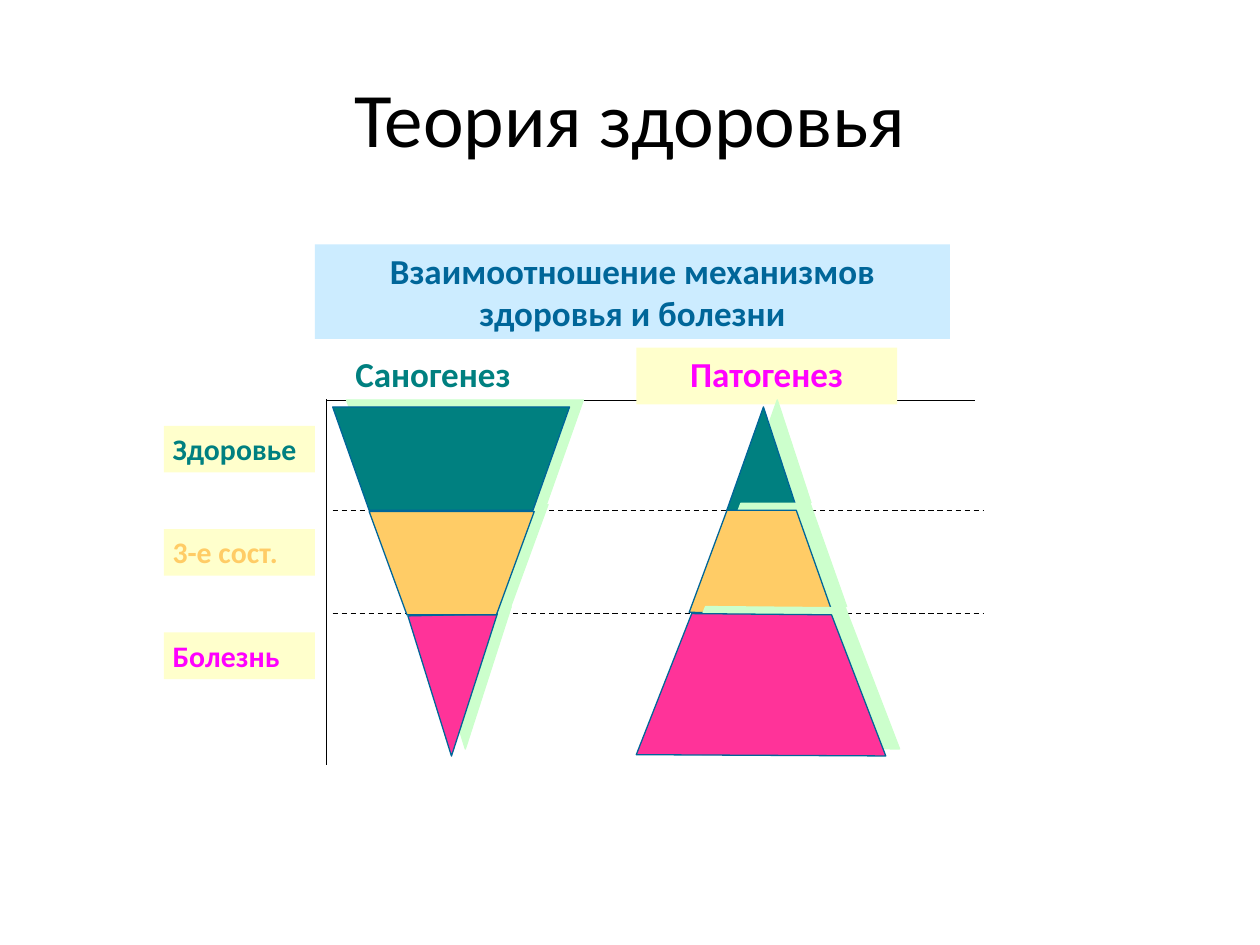
import pptx
import pptx.util
import pptx.dml.color
import pptx.enum.dml
import pptx.enum.shapes
import pptx.enum.text
import pptx.oxml
import pptx.oxml.ns
from pptx.util import Inches

RGBColor = pptx.dml.color.RGBColor
MSO_SHAPE = pptx.enum.shapes.MSO_SHAPE
PP_ALIGN = pptx.enum.text.PP_ALIGN
BLACK = RGBColor(0x00, 0x00, 0x00)
TEAL = RGBColor(0x00, 0x80, 0x80)
ORANGE = RGBColor(0xFF, 0xCC, 0x66)
PINK = RGBColor(0xFF, 0x33, 0x99)
MAGENTA = RGBColor(0xFF, 0x00, 0xFF)
BLUE = RGBColor(0x00, 0x66, 0x99)
PALE_BLUE = RGBColor(0xCC, 0xEC, 0xFF)
PALE_YELLOW = RGBColor(0xFF, 0xFF, 0xCC)
PALE_GREEN = RGBColor(0xCC, 0xFF, 0xCC)
FONT = "Calibri"


def add_label(shapes, text, box, size, color, fill, alignment):
    """Add a bold label, on a filled rectangle or without a background."""
    box = [Inches(value) for value in box]
    if fill is None:
        shape = shapes.add_textbox(*box)
    else:
        shape = shapes.add_shape(MSO_SHAPE.RECTANGLE, *box)
        shape.shadow.inherit = False
        shape.fill.solid()
        shape.fill.fore_color.rgb = fill
        shape.line.fill.background()
    frame = shape.text_frame
    frame.word_wrap = True
    frame.vertical_anchor = pptx.enum.text.MSO_ANCHOR.TOP
    frame.margin_left = frame.margin_right = Inches(0.07)
    frame.margin_top = frame.margin_bottom = Inches(0.04)
    paragraph = frame.paragraphs[0]
    paragraph.alignment = alignment
    run = paragraph.add_run()
    run.text = text
    run.font.name = FONT
    run.font.size = pptx.util.Pt(size)
    run.font.bold = True
    run.font.color.rgb = color


def style_band(shape, color):
    """Fill and outline a pyramid band and give it a solid offset shadow."""
    shape.fill.solid()
    shape.fill.fore_color.rgb = color
    shape.line.color.rgb = BLUE
    shape.line.width = pptx.util.Pt(0.75)
    shape.shadow.inherit = False
    effects = shape._element.spPr.find(pptx.oxml.ns.qn("a:effectLst"))
    effects.append(pptx.oxml.parse_xml(
        f'<a:outerShdw {pptx.oxml.ns.nsdecls("a")} dist="{pptx.util.Pt(8.9)}" '
        f'dir="{333 * 60000}" algn="ctr" rotWithShape="0">'
        f'<a:srgbClr val="{PALE_GREEN}"/></a:outerShdw>'))


presentation = pptx.Presentation()
presentation.slide_width = Inches(10)
presentation.slide_height = Inches(7.5)
slide = presentation.slides.add_slide(presentation.slide_layouts[5])

# Title
title = slide.shapes.title
title.left, title.top = Inches(0.5), Inches(0.3)
title.width, title.height = Inches(9), Inches(1.25)
title.text_frame.vertical_anchor = pptx.enum.text.MSO_ANCHOR.MIDDLE
title_paragraph = title.text_frame.paragraphs[0]
title_paragraph.alignment = PP_ALIGN.CENTER
title_run = title_paragraph.add_run()
title_run.text = "Теория здоровья"
title_run.font.name = FONT
title_run.font.size = pptx.util.Pt(44)
title_run.font.color.rgb = BLACK

diagram = slide.shapes.add_group_shape().shapes

# Axes and dashed level lines
for x1, y1, x2, y2, dashed in [
    (2.59, 3.17, 2.59, 6.07, False),
    (2.59, 3.18, 7.74, 3.18, False),
    (2.64, 4.05, 7.8, 4.05, True),
    (2.64, 4.87, 7.8, 4.87, True),
]:
    line = diagram.add_connector(
        pptx.enum.shapes.MSO_CONNECTOR.STRAIGHT,
        Inches(x1), Inches(y1), Inches(x2), Inches(y2))
    line.line.color.rgb = BLACK
    line.line.width = pptx.util.Pt(0.75)
    if dashed:
        line.line.dash_style = pptx.enum.dml.MSO_LINE.DASH
    line._element.spPr.append(pptx.oxml.parse_xml(
        f'<a:effectLst {pptx.oxml.ns.nsdecls("a")}/>'))

# Heading of the right pyramid and level labels
add_label(diagram, "Патогенез", (5.05, 2.76, 2.07, 0.45), 20, MAGENTA,
          PALE_YELLOW, PP_ALIGN.CENTER)
levels = [("Здоровье", TEAL), ("3-е сост.", ORANGE), ("Болезнь", MAGENTA)]
for index, (text, color) in enumerate(levels):
    add_label(diagram, text, (1.3, 3.38 + 0.82 * index, 1.2, 0.37), 17, color,
              PALE_YELLOW, PP_ALIGN.LEFT)

# Pyramids, from back to front: a tip, then two trapezoids
pyramids = [
    ((3.25, 4.88, 0.71, 1.12), 178.7, 0.549, PINK, [
        (ORANGE, [(2.93, 4.06), (3.23, 4.88), (3.94, 4.88), (4.24, 4.06)]),
        (TEAL, [(2.64, 3.23), (2.93, 4.05), (4.23, 4.05), (4.52, 3.23)]),
    ]),
    ((5.76, 3.23, 0.56, 0.82), 359, 0.548, TEAL, [
        (ORANGE, [(6.61, 4.87), (6.32, 4.05), (5.77, 4.05), (5.47, 4.86)]),
        (PINK, [(7.03, 6), (6.6, 4.88), (5.49, 4.87), (5.05, 5.99)]),
    ]),
]
for box, rotation, apex, tip_color, trapezoids in pyramids:
    tip = diagram.add_shape(MSO_SHAPE.ISOSCELES_TRIANGLE,
                            *[Inches(value) for value in box])
    tip.rotation = rotation
    tip.adjustments[0] = apex
    style_band(tip, tip_color)
    for color, corners in trapezoids:
        points = [(Inches(x), Inches(y)) for x, y in corners]
        builder = diagram.build_freeform(*points[0])
        builder.add_line_segments(points[1:], close=True)
        style_band(builder.convert_to_shape(), color)

# Diagram heading and heading of the left pyramid
add_label(diagram, "Взаимоотношение механизмов здоровья и болезни",
          (2.5, 1.94, 5.04, 0.75), 20, BLUE, PALE_BLUE, PP_ALIGN.CENTER)
add_label(diagram, "Саногенез", (2.75, 2.76, 1.77, 0.41), 20, TEAL, None,
          PP_ALIGN.LEFT)

presentation.save("out.pptx")
